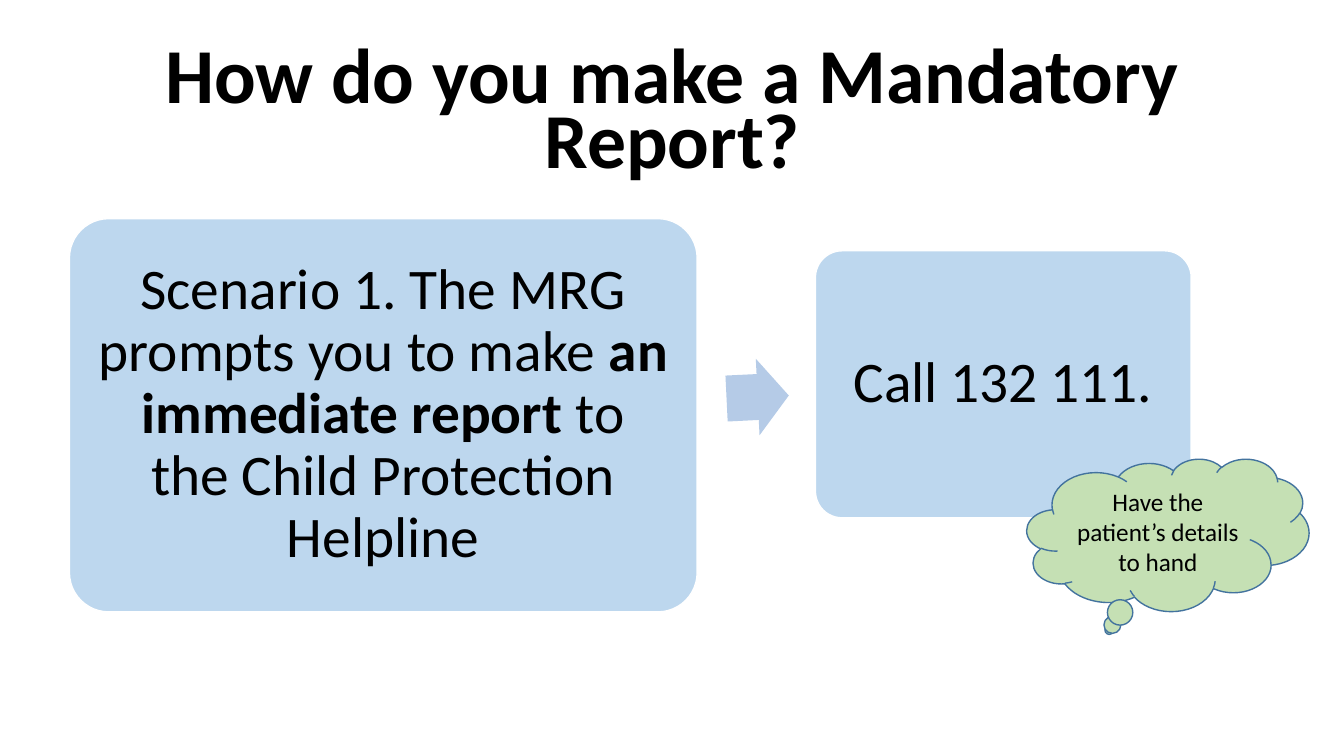
"""Build the slide on making a mandatory report."""
from dataclasses import dataclass

from pptx import Presentation
from pptx.dml.color import RGBColor
from pptx.enum.shapes import MSO_SHAPE
from pptx.enum.text import MSO_ANCHOR, PP_ALIGN
from pptx.shapes.autoshape import Shape
from pptx.slide import Slide
from pptx.util import Cm, Pt


@dataclass(frozen=True)
class Theme:
    """Colours, font and type sizes of the slide."""

    font: str = "Calibri"
    text: str = "000000"
    card: str = "BDD7EE"
    card_line: str = "FFFFFF"
    arrow: str = "B5CBE7"
    cloud: str = "C5E0B4"
    cloud_line: str = "43739E"
    title_size: float = 55.5
    card_size: float = 41
    cloud_size: float = 18


@dataclass(frozen=True)
class Box:
    """Position and size in centimetres."""

    left: float
    top: float
    width: float
    height: float

    def lengths(self) -> tuple[Cm, Cm, Cm, Cm]:
        """Return the four lengths in the order python-pptx expects."""
        return Cm(self.left), Cm(self.top), Cm(self.width), Cm(self.height)


@dataclass(frozen=True)
class Card:
    """A step of the process, with text as (words, bold) pairs."""

    box: Box
    runs: tuple[tuple[str, bool], ...]


THEME = Theme()
TITLE_BOX = Box(2.34, 1.02, 29.21, 3.68)
ARROW_BOX = Box(18.31, 9.04, 1.57, 1.93)
CLOUD_BOX = Box(25.88, 11.56, 7.11, 3.84)
CARDS = (
    Card(
        Box(1.75, 5.51, 15.82, 9.91),
        (
            ("Scenario 1. The MRG prompts you to make ", False),
            ("an immediate report ", True),
            ("to the Child Protection Helpline", False),
        ),
    ),
    Card(Box(20.55, 6.32, 9.47, 6.73), (("Call 132 111.", False),)),
)


def write_text(
    shape: Shape,
    runs: tuple[tuple[str, bool], ...],
    *,
    size: float,
    anchor: MSO_ANCHOR = MSO_ANCHOR.MIDDLE,
    line_spacing: float = 1.0,
    inset: float | None = None,
) -> None:
    """Write one centred paragraph into a shape."""
    frame = shape.text_frame
    frame.word_wrap = True
    frame.vertical_anchor = anchor
    if inset is not None:
        frame.margin_left = frame.margin_right = Cm(inset)
        frame.margin_top = frame.margin_bottom = Cm(inset)
    paragraph = frame.paragraphs[0]
    paragraph.alignment = PP_ALIGN.CENTER
    paragraph.line_spacing = line_spacing
    for words, bold in runs:
        run = paragraph.add_run()
        run.text = words
        run.font.name = THEME.font
        run.font.size = Pt(size)
        run.font.bold = bold
        run.font.color.rgb = RGBColor.from_string(THEME.text)


def add_figure(
    slide: Slide, kind: MSO_SHAPE, box: Box, fill: str, line: str | None = None
) -> Shape:
    """Add a filled preset shape without a shadow."""
    shape = slide.shapes.add_shape(kind, *box.lengths())
    shape.shadow.inherit = False
    shape.fill.solid()
    shape.fill.fore_color.rgb = RGBColor.from_string(fill)
    if line is None:
        shape.line.fill.background()
    else:
        shape.line.color.rgb = RGBColor.from_string(line)
        shape.line.width = Pt(1)
    return shape


def add_card(slide: Slide, card: Card) -> None:
    """Add a rounded card holding one step."""
    shape = add_figure(
        slide, MSO_SHAPE.ROUNDED_RECTANGLE, card.box, THEME.card, THEME.card_line
    )
    shape.adjustments[0] = 0.1
    write_text(shape, card.runs, size=THEME.card_size, line_spacing=0.9, inset=0.43)


def add_arrow(slide: Slide) -> None:
    """Add the slightly tilted arrow between the cards."""
    arrow = add_figure(slide, MSO_SHAPE.RIGHT_ARROW, ARROW_BOX, THEME.arrow)
    arrow.adjustments[0] = 0.6
    arrow.adjustments[1] = 0.5
    arrow.rotation = 357.2


def main() -> None:
    """Build and save the presentation."""
    presentation = Presentation()
    presentation.slide_width = Cm(33.87)
    presentation.slide_height = Cm(19.05)
    slide = presentation.slides.add_slide(presentation.slide_layouts[6])

    title = slide.shapes.add_textbox(*TITLE_BOX.lengths())
    write_text(
        title,
        (("How do you make a Mandatory Report?", True),),
        size=THEME.title_size,
        anchor=MSO_ANCHOR.BOTTOM,
        line_spacing=0.7,
    )
    for card in CARDS:
        add_card(slide, card)
    add_arrow(slide)
    cloud = add_figure(
        slide, MSO_SHAPE.CLOUD_CALLOUT, CLOUD_BOX, THEME.cloud, THEME.cloud_line
    )
    write_text(
        cloud, (("Have the patient’s details to hand", False),), size=THEME.cloud_size
    )
    presentation.save("out.pptx")


if __name__ == "__main__":
    main()
